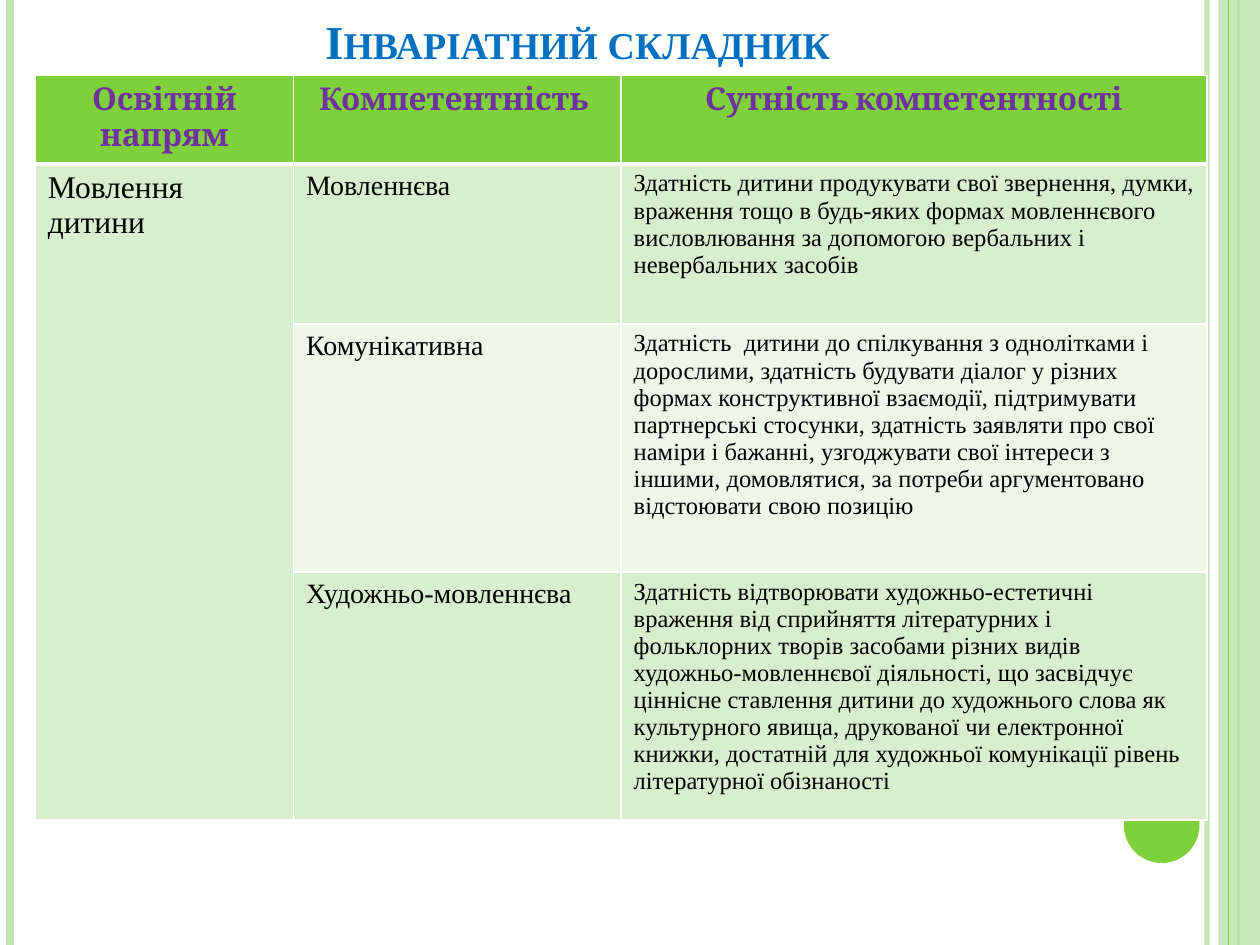
import pptx
import pptx.util
import pptx.dml.color
import pptx.enum.shapes
import pptx.enum.text
import pptx.oxml.ns
from lxml import etree

Inches, Pt = pptx.util.Inches, pptx.util.Pt
RGBColor = pptx.dml.color.RGBColor
PP_ALIGN = pptx.enum.text.PP_ALIGN
qn = pptx.oxml.ns.qn

GREEN = RGBColor(0x7F, 0xD1, 0x3B)
PALE_GREEN = RGBColor(0xC0, 0xE5, 0xAF)
BAND_DARK = RGBColor(0xD8, 0xEE, 0xCE)
BAND_LIGHT = RGBColor(0xEC, 0xF7, 0xE8)
BLUE = RGBColor(0x00, 0x70, 0xC0)
PURPLE = RGBColor(0x70, 0x30, 0xA0)
BLACK = RGBColor(0, 0, 0)
WHITE = RGBColor(0xFF, 0xFF, 0xFF)
SERIF, HEADING = "Times New Roman", "Cambria"

# Content
TITLE = "Інваріатний складник"
HEADERS = ["Освітній напрям", "Компетентність ", "Сутність компетентності"]
DIRECTION = "Мовлення дитини"
COMPETENCES = [
    ("Мовленнєва",
     "Здатність дитини продукувати свої звернення, думки, враження тощо в будь-яких "
     "формах мовленнєвого висловлювання за допомогою вербальних і невербальних засобів"),
    ("Комунікативна",
     "Здатність  дитини до спілкування з однолітками і дорослими, здатність будувати "
     "діалог у різних формах конструктивної взаємодії, підтримувати партнерські стосунки, "
     "здатність заявляти про свої наміри і бажанні, узгоджувати свої інтереси з іншими, "
     "домовлятися, за потреби аргументовано відстоювати свою позицію"),
    ("Художньо-мовленнєва",
     "Здатність відтворювати художньо-естетичні враження від сприйняття літературних і "
     "фольклорних творів засобами різних видів художньо-мовленнєвої діяльності, що "
     "засвідчує ціннісне ставлення дитини до художнього слова як культурного явища, "
     "друкованої чи електронної книжки, достатній для художньої комунікації рівень "
     "літературної обізнаності"),
]

# Layout, in inches
WIDTH, HEIGHT = 10, 7.5
COLUMNS = [2.05, 2.6, 4.65]
ROWS = [0.7, 1.27, 1.97, 1.82]
BODY_SIZES = [18, 16, 14]
STRIPE_LEFT = 9.67


def set_alpha(fill_owner, percent):
    color = next(fill_owner.iter(qn("a:srgbClr")))
    etree.SubElement(color, qn("a:alpha")).set("val", str(percent * 1000))


def add_rule(slide, x, color, width, opacity=100):
    rule = slide.shapes.add_connector(
        pptx.enum.shapes.MSO_CONNECTOR.STRAIGHT, Inches(x), 0, Inches(x), Inches(HEIGHT))
    rule.line.color.rgb = color
    rule.line.width = Pt(width)
    properties = rule.line._get_or_add_ln().getparent()
    etree.SubElement(properties, qn("a:effectLst"))
    if opacity < 100:
        set_alpha(properties, opacity)


def add_plain_shape(slide, kind, box, color):
    shape = slide.shapes.add_shape(kind, *map(Inches, box))
    shape.shadow.inherit = False
    shape.fill.solid()
    shape.fill.fore_color.rgb = color
    shape.line.fill.background()
    return shape


def write(frame, text, font, size, color, bold=False, align=PP_ALIGN.LEFT):
    paragraph = frame.paragraphs[0]
    paragraph.add_run().text = text
    paragraph.alignment = align
    paragraph.font.name, paragraph.font.size = font, Pt(size)
    paragraph.font.bold, paragraph.font.color.rgb = bold, color
    return paragraph


def style_cell(cell, color, bottom=1, top=1):
    cell.fill.solid()
    cell.fill.fore_color.rgb = color
    properties = cell._tc.get_or_add_tcPr()
    for index, (side, width) in enumerate(
            [("lnL", 1), ("lnR", 1), ("lnT", top), ("lnB", bottom)]):
        border = etree.Element(qn("a:" + side), w=str(Pt(width)))
        solid = etree.SubElement(border, qn("a:solidFill"))
        etree.SubElement(solid, qn("a:srgbClr")).set("val", str(WHITE))
        properties.insert(index, border)


def add_decoration(slide):
    shapes = pptx.enum.shapes.MSO_SHAPE
    add_rule(slide, 9.58, PALE_GREEN, 3, 93)
    add_rule(slide, 0.08, PALE_GREEN, 4.5)
    add_rule(slide, 9.83, GREEN, 1.5)
    stripe = add_plain_shape(
        slide, shapes.RECTANGLE, (STRIPE_LEFT, 0, WIDTH - STRIPE_LEFT, HEIGHT), PALE_GREEN)
    set_alpha(stripe._element.spPr, 87)
    add_rule(slide, 9.75, GREEN, 0.75)
    add_plain_shape(slide, shapes.OVAL, (8.92, 6.25, 0.6, 0.6), GREEN)


def add_title(slide):
    frame = slide.shapes.add_textbox(*map(Inches, (0.5, 0.13, 8.17, 0.47))).text_frame
    frame.word_wrap = True
    frame.vertical_anchor = pptx.enum.text.MSO_ANCHOR.BOTTOM
    title = write(frame, TITLE, SERIF, 27, BLUE, True, PP_ALIGN.CENTER)
    title.runs[0]._r.get_or_add_rPr().set("cap", "small")


def add_competence_table(slide):
    table = slide.shapes.add_table(
        len(ROWS), len(COLUMNS), Inches(0.28), Inches(0.6),
        Inches(sum(COLUMNS)), Inches(sum(ROWS))).table
    for column, width in zip(table.columns, COLUMNS):
        column.width = Inches(width)
    for row, height in zip(table.rows, ROWS):
        row.height = Inches(height)

    # Header row
    for c, header in enumerate(HEADERS):
        cell = table.cell(0, c)
        style_cell(cell, GREEN, bottom=3)
        write(cell.text_frame, header, HEADING, 18, PURPLE, True, PP_ALIGN.CENTER)

    # Body rows, with the direction spanning all of them
    table.cell(1, 0).merge(table.cell(len(COMPETENCES), 0))
    for r, competence in enumerate(COMPETENCES, start=1):
        band = BAND_DARK if r % 2 else BAND_LIGHT
        texts = (DIRECTION if r == 1 else "",) + competence
        for c, (text, size) in enumerate(zip(texts, BODY_SIZES)):
            cell = table.cell(r, c)
            style_cell(cell, BAND_DARK if c == 0 else band, top=3 if r == 1 else 1)
            if text:
                write(cell.text_frame, text, SERIF, size, BLACK)


def main():
    deck = pptx.Presentation()
    deck.slide_width, deck.slide_height = Inches(WIDTH), Inches(HEIGHT)
    slide = deck.slides.add_slide(deck.slide_layouts[6])
    add_decoration(slide)
    add_title(slide)
    add_competence_table(slide)
    deck.save("out.pptx")


if __name__ == "__main__":
    main()
